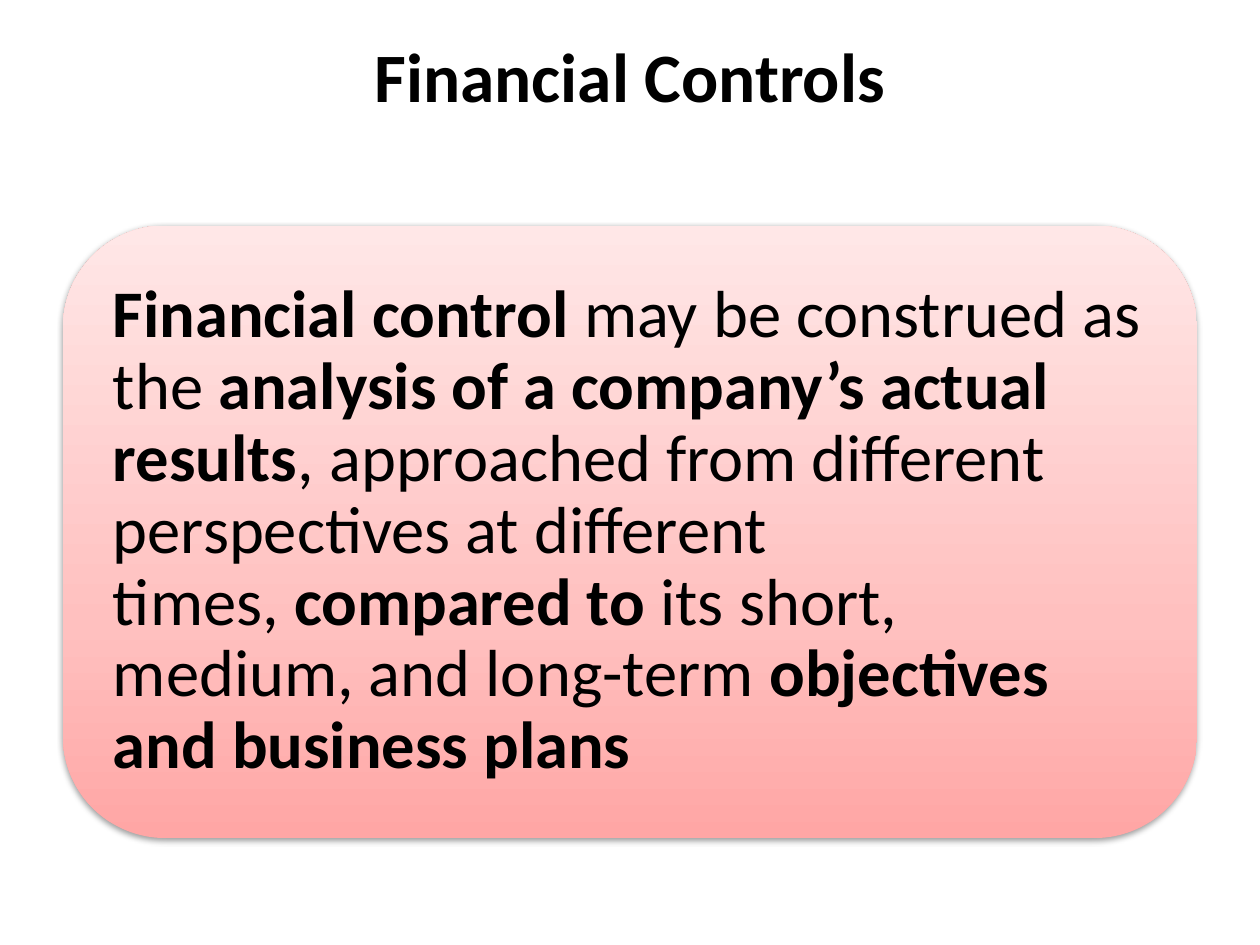
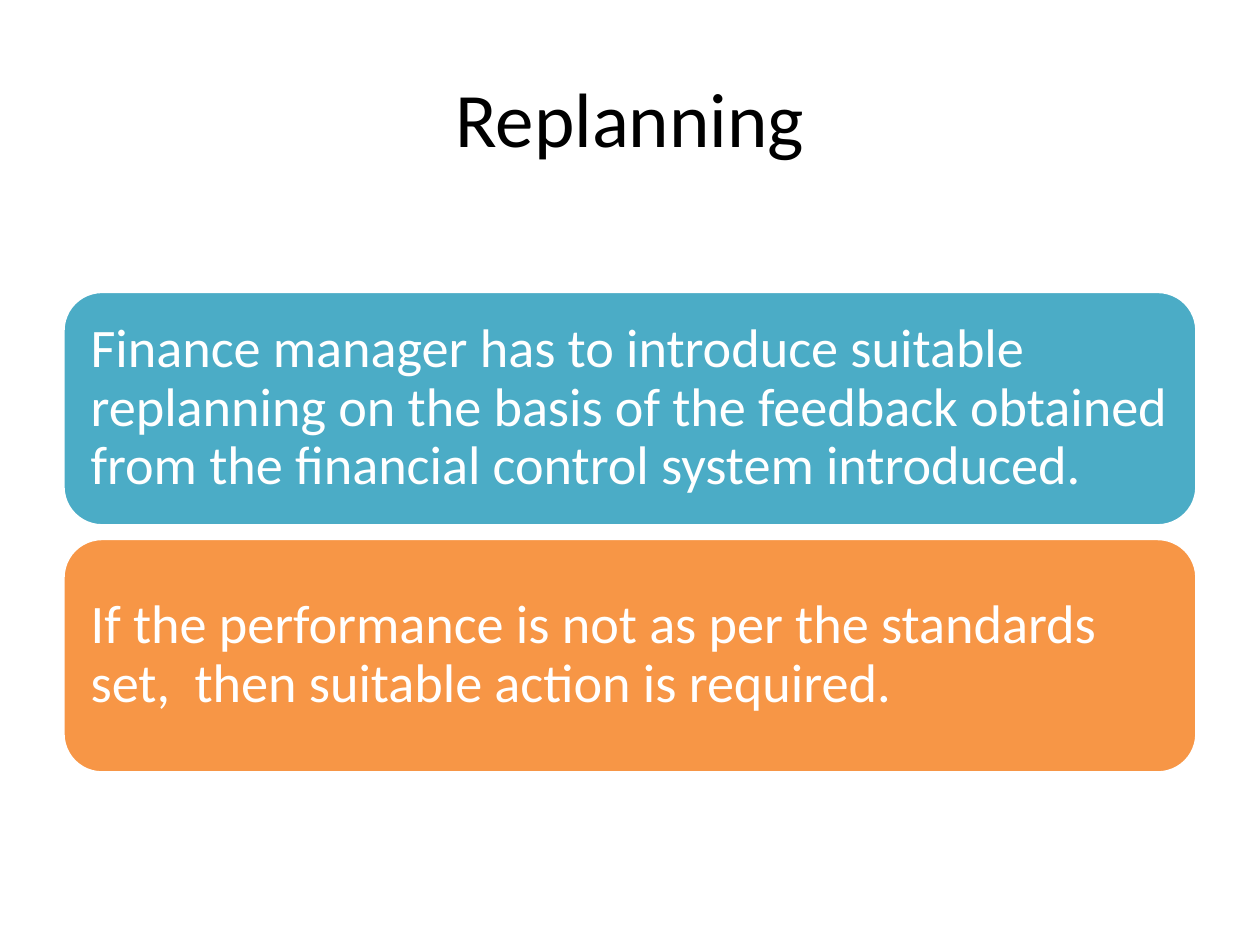
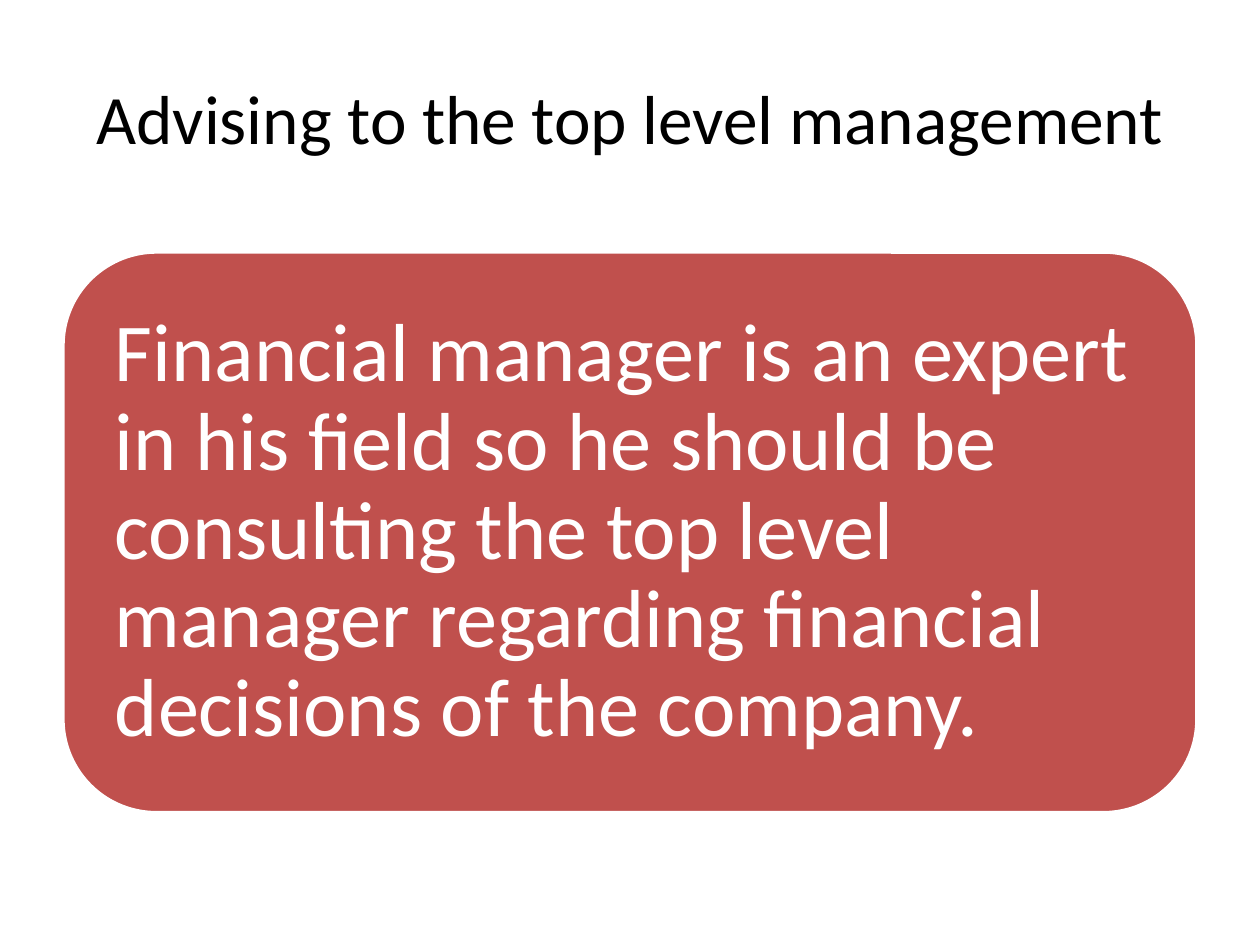
from lxml import etree
from pptx import Presentation
from pptx import util as u
from pptx.dml.color import RGBColor
from pptx.enum import shapes, text
from pptx.oxml.ns import qn

Pt = u.Pt
HUES = {
    "ink": "000000", "white": "FFFFFF", "teal": "4BACC6", "orange": "F79646",
    "red": "C0504D", "rose": "FFA6A5", "pink": "FFC0BF", "blush": "FFE7E7",
}
BLEND = [("rose", 0), ("pink", 35), ("blush", 100)]
LEFT, WIDE = 36, 648
HARD = chr(160)


class Deck:
    def __init__(self, face="Calibri"):
        self.face = face
        self.prs = Presentation()
        self.prs.slide_width, self.prs.slide_height = Pt(720), Pt(540)
        self.slide = None

    def hue(self, name):
        return RGBColor.from_string(HUES[name])

    def style(self, run, size, tint, bold=False):
        font = run.font
        font.name, font.size, font.bold = self.face, Pt(size), bold
        font.color.rgb = self.hue(tint)

    def page(self, words, size, bold=False, high=False):
        self.slide = self.prs.slides.add_slide(self.prs.slide_layouts[5])
        title = self.slide.shapes.title
        title.left, title.top = Pt(LEFT), Pt(18.7 if high else 21.6)
        title.width, title.height = Pt(WIDE), Pt(90)
        frame = title.text_frame
        frame.text = words
        frame.vertical_anchor = text.MSO_ANCHOR.MIDDLE
        if high:
            frame.vertical_anchor = text.MSO_ANCHOR.TOP
            frame.margin_top = 0
        para = frame.paragraphs[0]
        para.alignment = text.PP_ALIGN.CENTER
        self.style(para.runs[0], size, "ink", bold)

    def card(self, top, tall, parts, size, pad, fill=None, tint="white"):
        card = self.slide.shapes.add_shape(
            shapes.MSO_SHAPE.ROUNDED_RECTANGLE, Pt(LEFT), Pt(top), Pt(WIDE), Pt(tall))
        card.shadow.inherit = False
        if fill:
            card.fill.solid()
            card.fill.fore_color.rgb = self.hue(fill)
            card.line.color.rgb = self.hue("white")
            card.line.width = Pt(2)
        else:
            card.line.fill.background()
            self.blend(card)
            self.shade(card)
        frame = card.text_frame
        frame.word_wrap = True
        frame.vertical_anchor = text.MSO_ANCHOR.MIDDLE
        frame.margin_left = frame.margin_right = Pt(pad)
        frame.margin_top = frame.margin_bottom = Pt(pad)
        para = frame.paragraphs[0]
        para.alignment = text.PP_ALIGN.LEFT
        para.line_spacing = 0.9
        for words, bold in parts:
            run = para.add_run()
            run.text = words
            self.style(run, size, tint, bold)

    def blend(self, card):
        card.fill.background()
        props = card._element.spPr
        grad = etree.Element(qn("a:gradFill"), rotWithShape="1")
        stops = etree.SubElement(grad, qn("a:gsLst"))
        for name, spot in BLEND:
            stop = etree.SubElement(stops, qn("a:gs"), pos=str(spot * 1000))
            etree.SubElement(stop, qn("a:srgbClr"), val=HUES[name])
        etree.SubElement(grad, qn("a:lin"), ang=str(270 * 60000), scaled="0")
        props.replace(props.find(qn("a:noFill")), grad)

    def shade(self, card):
        effects = card._element.spPr.find(qn("a:effectLst"))
        drop = etree.SubElement(
            effects, qn("a:outerShdw"), blurRad=str(Pt(3.1)), dist=str(Pt(1.6)),
            dir=str(90 * 60000), rotWithShape="0")
        tone = etree.SubElement(drop, qn("a:srgbClr"), val=HUES["ink"])
        etree.SubElement(tone, qn("a:alpha"), val="38000")


def main():
    deck = Deck()

    deck.page("Financial Controls", 39.6, bold=True, high=True)
    deck.card(128.9, 350, [
        (f"Financial control{HARD}", True),
        (f"may be construed as the{HARD}", False),
        (f"analysis{HARD}of a company’s actual results", True),
        (f", approached from different perspectives at different times,{HARD}", False),
        ("compared to", True),
        (f"{HARD}its short, medium, and long-term{HARD}", False),
        ("objectives and business plans", True),
    ], 38, 11.5, tint="ink")

    deck.page("Replanning", 44)
    notes = [
        ("teal", "Finance manager has to introduce suitable replanning on the basis of "
                 "the feedback obtained from the financial control system introduced."),
        ("orange", "If the performance is not as per the standards set,  "
                   "then suitable action is required."),
    ]
    for row, (fill, words) in enumerate(notes):
        deck.card(166.5 + row * 141.2, 134, [(words, False)], 31, 9.3, fill)

    deck.page("Advising to the top level management", 39.6)
    deck.card(144, 320.4, [
        ("Financial manager is an expert in his field so he should be consulting the "
         "top level manager regarding financial decisions of the company.", False),
    ], 47, 14.1, "red")

    deck.prs.save("out.pptx")


if __name__ == "__main__":
    main()
